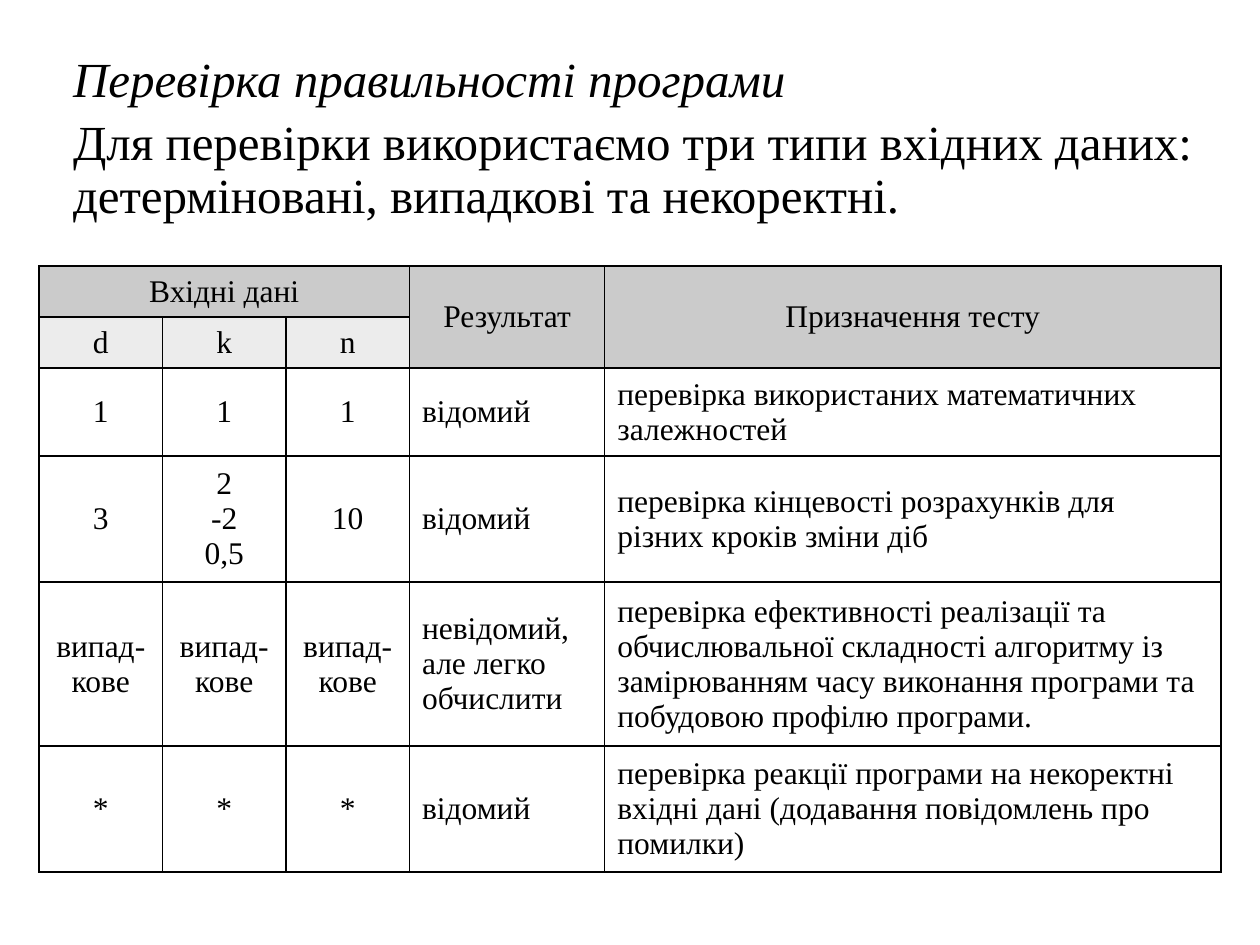
import pptx
import pptx.dml.color
import pptx.enum.text
import pptx.oxml
import pptx.oxml.ns
import pptx.util

ALIGN = pptx.enum.text.PP_ALIGN
ANCHOR = pptx.enum.text.MSO_ANCHOR
HEADER, SUBHEADER, PLAIN, INK = "CBCBCB", "ECECEC", "FFFFFF", "000000"


def colour(value):
    return pptx.dml.color.RGBColor.from_string(value)


class SlideWriter:
    font = "Times New Roman"
    columns, rows = 100, 75

    def __init__(self, deck):
        self.deck = deck
        self.page = deck.slides.add_slide(deck.slide_layouts[6])

    def x(self, columns):
        return round(self.deck.slide_width * columns / self.columns)

    def y(self, rows):
        return round(self.deck.slide_height * rows / self.rows)

    def span(self, para, text, size, italic=False):
        span = para.add_run()
        span.text = text
        span.font.name = self.font
        span.font.size = pptx.util.Pt(size)
        span.font.italic = italic
        span.font.color.rgb = colour(INK)

    def body(self, left, top, width, height, lines, size):
        box = self.page.shapes.add_textbox(
            self.x(left), self.y(top), self.x(width), self.y(height))
        frame = box.text_frame
        frame.word_wrap = True
        frame.margin_left = frame.margin_right = self.x(2)
        for index, (text, italic) in enumerate(lines):
            para = frame.add_paragraph() if index else frame.paragraphs[0]
            para._p.get_or_add_pPr().set("marL", str(self.x(3.8)))
            para.line_spacing = 0.9
            para.space_before = pptx.util.Pt(0.2 * size if index else 0)
            self.span(para, text, size, italic)

    def borders(self, cell):
        properties = cell._tc.get_or_add_tcPr()
        for position, side in enumerate(("lnL", "lnR", "lnT", "lnB")):
            line = pptx.oxml.parse_xml(
                f'<a:{side} {pptx.oxml.ns.nsdecls("a")} w="{pptx.util.Pt(1)}">'
                f'<a:solidFill><a:srgbClr val="{INK}"/></a:solidFill></a:{side}>')
            properties.insert(position, line)

    def cell(self, cell, text, fill, align, size):
        cell.fill.solid()
        cell.fill.fore_color.rgb = colour(fill)
        cell.vertical_anchor = ANCHOR.MIDDLE
        self.borders(cell)
        for index, line in enumerate(text.split("\n")):
            frame = cell.text_frame
            para = frame.add_paragraph() if index else frame.paragraphs[0]
            para.alignment = align
            self.span(para, line, size)

    def table(self, left, top, widths, heights, content, merges, size):
        table = self.page.shapes.add_table(
            len(heights), len(widths), self.x(left), self.y(top),
            self.x(sum(widths)), self.y(sum(heights))).table
        table.first_row = table.horz_banding = False
        for column, width in zip(table.columns, widths):
            column.width = self.x(width)
        for row, height in zip(table.rows, heights):
            row.height = self.y(height)
        for first, last in merges:
            table.cell(*first).merge(table.cell(*last))
        for row, texts in enumerate(content):
            for column, text in enumerate(texts):
                heading = row < 2
                fill = PLAIN
                if heading:
                    fill = SUBHEADER if row == 1 and column < 3 else HEADER
                align = ALIGN.CENTER if heading or column < 3 else ALIGN.LEFT
                self.cell(table.cell(row, column), text, fill, align, size)


def main():
    deck = pptx.Presentation()
    deck.slide_width = pptx.util.Inches(10)
    deck.slide_height = pptx.util.Inches(7.5)
    writer = SlideWriter(deck)
    writer.body(0, 3.9, 100, 14.8, [
        ("Перевірка правильності програми", True),
        ("Для перевірки використаємо три типи вхідних даних: "
         "детерміновані, випадкові та некоректні.", False),
    ], 28)
    tests = [
        ["Вхідні дані", "", "", "Результат", "Призначення тесту"],
        ["d", "k", "n", "", ""],
        ["1"] * 3 + ["відомий", "перевірка використаних математичних залежностей"],
        ["3", "2\n-2\n0,5", "10", "відомий",
         "перевірка кінцевості розрахунків для різних кроків зміни діб"],
        ["випад-кове"] * 3 + [
            "невідомий, але легко обчислити",
            "перевірка ефективності реалізації та обчислювальної складності "
            "алгоритму із замірюванням часу виконання програми та побудовою "
            "профілю програми."],
        ["*"] * 3 + [
            "відомий",
            "перевірка реакції програми на некоректні вхідні дані "
            "(додавання повідомлень про помилки)"],
    ]
    merges = [((0, 0), (0, 2)), ((0, 3), (1, 3)), ((0, 4), (1, 4))]
    writer.table(3.1, 21.1, [9.8, 9.8, 9.8, 15.5, 48.9],
                 [4.05, 4.05, 7, 10, 13, 10], tests, merges, 18)
    deck.save("out.pptx")


if __name__ == "__main__":
    main()
